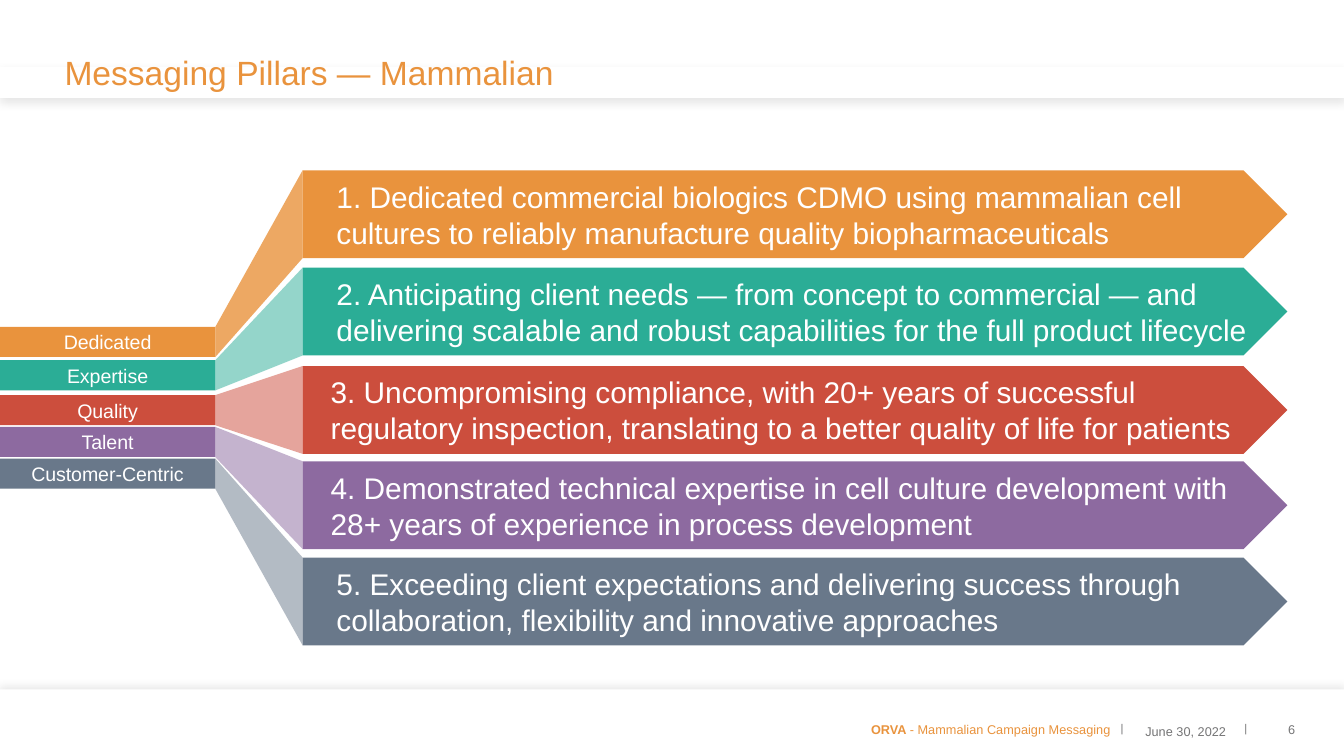
from lxml import etree
from pptx import Presentation
from pptx import util as u
from pptx.dml.color import RGBColor
from pptx.enum import shapes, text
from pptx.oxml.ns import qn
from pptx.util import Cm

ORANGE = RGBColor(0xE9, 0x93, 0x3D)
TEAL = RGBColor(0x2B, 0xAD, 0x96)
RED = RGBColor(0xCC, 0x4E, 0x3D)
PURPLE = RGBColor(0x8D, 0x6A, 0xA0)
SLATE = RGBColor(0x69, 0x78, 0x8A)
GRAY = RGBColor(0x75, 0x75, 0x76)
WHITE = RGBColor(0xFF, 0xFF, 0xFF)

LEFT, CENTER, RIGHT = text.PP_ALIGN.LEFT, text.PP_ALIGN.CENTER, text.PP_ALIGN.RIGHT
TOP, MIDDLE, BOTTOM = text.MSO_ANCHOR.TOP, text.MSO_ANCHOR.MIDDLE, text.MSO_ANCHOR.BOTTOM

SLIDE_WIDTH, SLIDE_HEIGHT = 25.4, 14.29
TAB_RIGHT, TAB_HEIGHT = 4.07, 0.57
BAR_LEFT, BAR_WIDTH, BAR_HEIGHT = 5.72, 18.61, 1.66

# label, colour, wedge opacity %, tab top, bar top, text left, text width, message
PILLARS = [
    ("Dedicated", ORANGE, 80, 6.18, 3.22, 5.72, 17.75,
     "1. Dedicated commercial biologics CDMO using mammalian cell cultures "
     "to reliably manufacture quality biopharmaceuticals"),
    ("Expertise", TEAL, 50, 6.81, 5.06, 5.72, 18.19,
     "2. Anticipating client needs — from concept to commercial — and "
     "delivering scalable and robust capabilities for the full product lifecycle"),
    ("Quality", RED, 51, 7.47, 6.92, 5.61, 18.39,
     "3. Uncompromising compliance, with 20+ years of successful regulatory "
     "inspection, translating to a better quality of life for patients"),
    ("Talent", PURPLE, 51, 8.07, 8.72, 5.61, 17.75,
     "4. Demonstrated technical expertise in cell culture development with "
     "28+ years of experience in process development"),
    ("Customer-Centric", SLATE, 50, 8.67, 10.54, 5.72, 17.75,
     "5. Exceeding client expectations and delivering success through "
     "collaboration, flexibility and innovative approaches"),
]


def set_attributes(target, values):
    for name, value in values.items():
        setattr(target, name, value)


def paint(shape, color):
    shape.shadow.inherit = False
    shape.fill.solid()
    shape.fill.fore_color.rgb = color
    shape.line.fill.background()


def write(shape, runs, size, align=LEFT, anchor=TOP, margins=(0.25, 0.13, 0.25, 0.13)):
    """Fill one paragraph from (words, colour, bold) runs; margins are left, top, right, bottom."""
    left, top, right, bottom = (Cm(margin) for margin in margins)
    frame = shape.text_frame
    set_attributes(frame, {
        "word_wrap": True, "auto_size": text.MSO_AUTO_SIZE.NONE, "vertical_anchor": anchor,
        "margin_left": left, "margin_top": top, "margin_right": right, "margin_bottom": bottom,
    })
    paragraph = frame.paragraphs[0]
    paragraph.alignment = align
    for words, color, bold in runs:
        run = paragraph.add_run()
        run.text = words
        set_attributes(run.font, {"name": "Arial", "size": u.Pt(size), "bold": bold})
        run.font.color.rgb = color
    return paragraph


def add_box(slide, preset, left, top, width, height, color):
    shape = slide.shapes.add_shape(preset, Cm(left), Cm(top), Cm(width), Cm(height))
    paint(shape, color)
    return shape


def add_text(slide, left, top, width, height, runs, size, **layout):
    box = slide.shapes.add_textbox(Cm(left), Cm(top), Cm(width), Cm(height))
    write(box, runs, size, **layout)


def add_band(slide, top, height, degrees):
    """Add a full-width white band whose soft shadow falls in the given direction."""
    band = add_box(slide, shapes.MSO_SHAPE.RECTANGLE, 0, top, SLIDE_WIDTH, height, WHITE)
    effects = band._element.spPr.find(qn("a:effectLst"))
    shadow = etree.SubElement(effects, qn("a:outerShdw"), blurRad=str(u.Pt(5)),
                              dist=str(u.Pt(2)), dir=str(degrees * 60000), rotWithShape="0")
    color = etree.SubElement(shadow, qn("a:srgbClr"), val="000000")
    etree.SubElement(color, qn("a:alpha"), val="9000")


def add_wedge(slide, tab_top, bar_top, color, opacity):
    """Join the right edge of a tab to the left edge of its bar."""
    corners = [(BAR_LEFT, bar_top), (TAB_RIGHT, tab_top),
               (TAB_RIGHT, tab_top + TAB_HEIGHT), (BAR_LEFT, bar_top + BAR_HEIGHT)]
    points = [(Cm(x), Cm(y)) for x, y in corners]
    builder = slide.shapes.build_freeform(*points[0])
    builder.add_line_segments(points[1:])
    wedge = builder.convert_to_shape()
    paint(wedge, color)
    fill_color = wedge._element.spPr.find(qn("a:solidFill"))[0]
    etree.SubElement(fill_color, qn("a:alpha"), val=str(opacity * 1000))


def add_pillar(slide, label, color, opacity, tab_top, bar_top, text_left, text_width, message):
    add_box(slide, shapes.MSO_SHAPE.PENTAGON, BAR_LEFT, bar_top, BAR_WIDTH, BAR_HEIGHT, color)
    add_wedge(slide, tab_top, bar_top, color, opacity)
    tab = add_box(slide, shapes.MSO_SHAPE.RECTANGLE, 0, tab_top, TAB_RIGHT, TAB_HEIGHT, color)
    write(tab, [(label, WHITE, False)], 10.5, CENTER, MIDDLE, (0.18, 0.1, 0.18, 0.1))
    add_text(slide, text_left, bar_top, text_width, BAR_HEIGHT, [(message, WHITE, False)], 16,
             anchor=MIDDLE, margins=(0.64, 0, 0, 0))


def add_title(slide, words):
    title = slide.shapes.title
    set_attributes(title, {"left": Cm(0.97), "top": Cm(0.64),
                           "width": Cm(23.44), "height": Cm(1.24)})
    write(title, [(words, ORANGE, False)], 18, anchor=BOTTOM).line_spacing = 0.9
    slide.shapes._spTree.append(title._element)  # in front of the header band


def add_footer(slide):
    for left in (21.03, 23.37):
        add_text(slide, left, 13.56, 0.56, 0.51, [("|", GRAY, False)], 6,
                 margins=(0.15, 0.08, 0.15, 0.08))
    add_text(slide, 23.8, 13.54, 1.22, 0.51, [("6", GRAY, False)], 6.8,
             align=CENTER, anchor=MIDDLE, margins=(0.23, 0.1, 0.23, 0.1))
    campaign = [("ORVA ", ORANGE, True), ("- Mammalian Campaign Messaging", ORANGE, False)]
    add_text(slide, 11.13, 13.54, 10.11, 0.51, campaign, 6.8, align=RIGHT, anchor=MIDDLE)
    add_text(slide, 21.23, 13.56, 2.36, 0.53, [("June 30, 2022", GRAY, False)], 6.8, align=CENTER)


def main():
    presentation = Presentation()
    set_attributes(presentation, {"slide_width": Cm(SLIDE_WIDTH),
                                  "slide_height": Cm(SLIDE_HEIGHT)})
    slide = presentation.slides.add_slide(presentation.slide_layouts[5])
    add_band(slide, 13.03, 1.26, 270)
    add_band(slide, 1.27, 0.58, 90)
    add_title(slide, "Messaging Pillars — Mammalian")
    add_footer(slide)
    for pillar in PILLARS:
        add_pillar(slide, *pillar)
    presentation.save("out.pptx")


if __name__ == "__main__":
    main()
